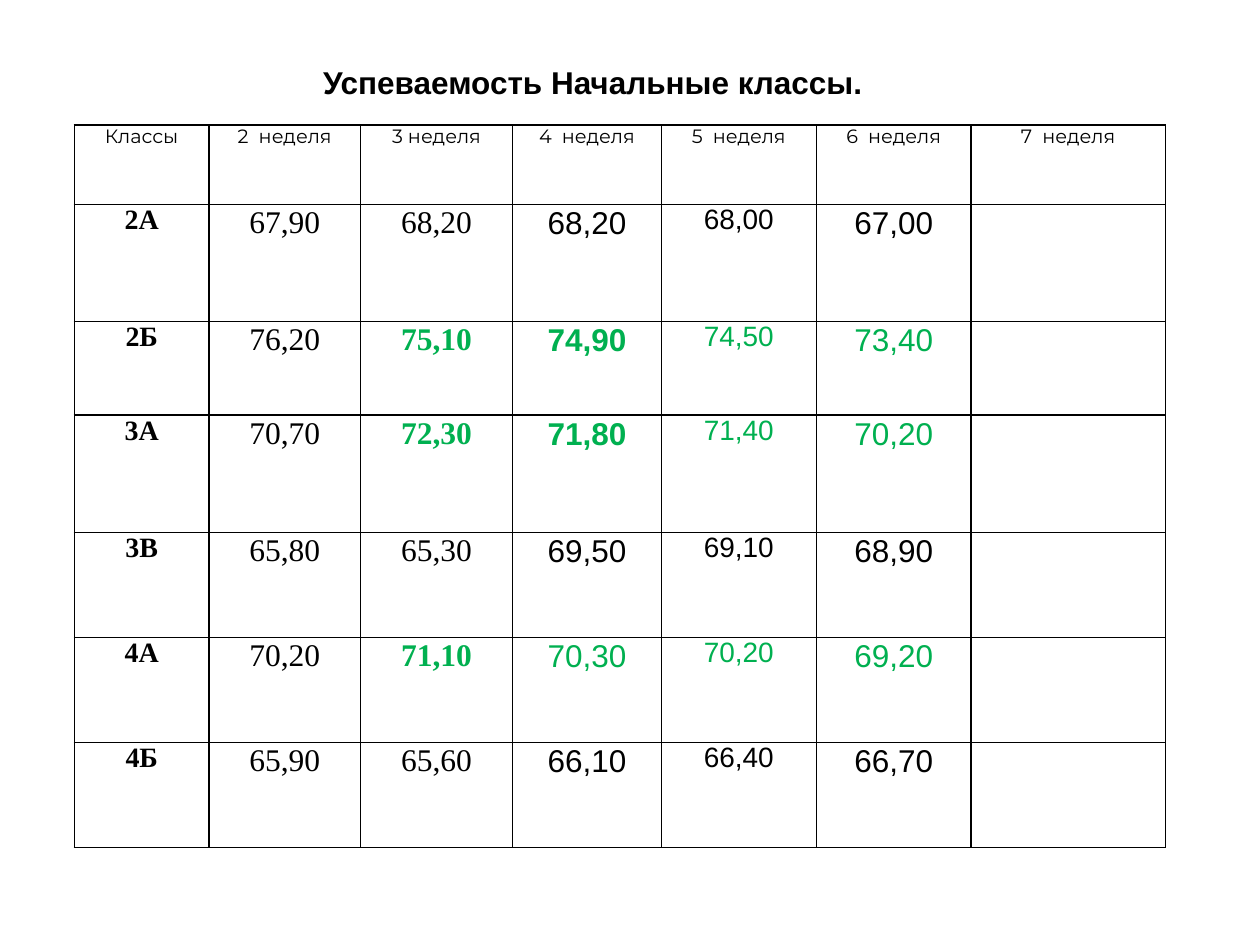
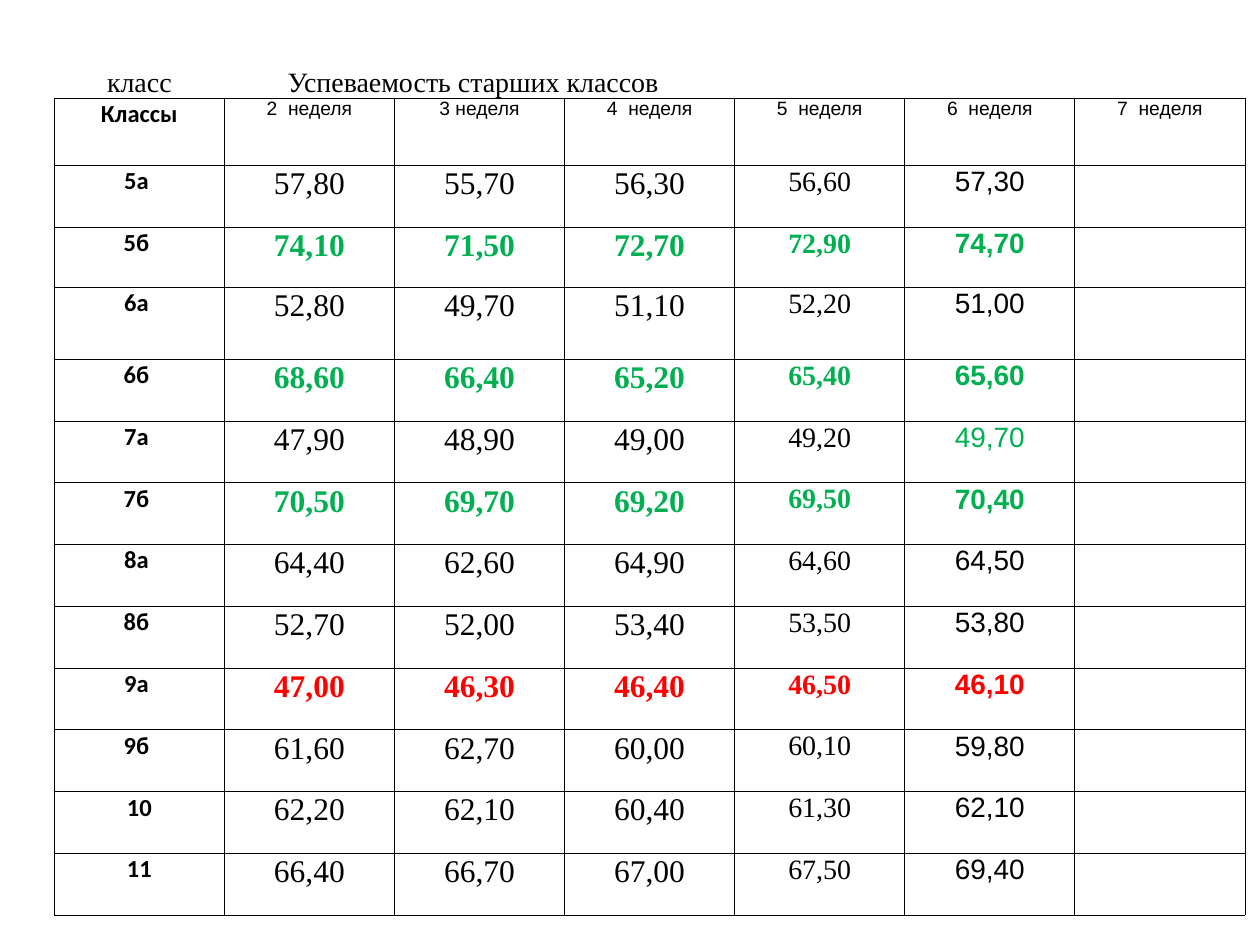
"""Builds two slides of weekly school results, one for junior and one for senior classes."""
import pptx
import pptx.dml.color
import pptx.enum.text
import pptx.oxml
import pptx.oxml.ns
import pptx.util

Pt = pptx.util.Pt
ALIGN = pptx.enum.text.PP_ALIGN
ANCHOR = pptx.enum.text.MSO_ANCHOR
HEX = {"ink": "000000", "good": "00B050", "bad": "FF0000", "paper": "FFFFFF"}
MARKS = {"": ("ink", False), "g": ("good", False), "G": ("good", True), "R": ("bad", True)}
SERIF, SANS = "Times New Roman", "Arial"
PLAIN = "{2D5ABB26-0587-4C30-8999-92F81FD0307C}"
WEEKS = ["2  неделя", "3 неделя", "4  неделя", "5  неделя", "6  неделя", "7  неделя"]

JUNIOR = [
    "2А 67,90 68,20 68,20 68,00 67,00",
    "2Б 76,20 75,10G 74,90G 74,50g 73,40g",
    "3А 70,70 72,30G 71,80G 71,40g 70,20g",
    "3В 65,80 65,30 69,50 69,10 68,90",
    "4А 70,20 71,10G 70,30g 70,20g 69,20g",
    "4Б 65,90 65,60 66,10 66,40 66,70",
]
SENIOR = [
    "5а 57,80 55,70 56,30 56,60 57,30",
    "5б 74,10G 71,50G 72,70G 72,90G 74,70G",
    "6а 52,80 49,70 51,10 52,20 51,00",
    "6б 68,60G 66,40G 65,20G 65,40G 65,60G",
    "7а 47,90 48,90 49,00 49,20 49,70g",
    "7б 70,50G 69,70G 69,20G 69,50G 70,40G",
    "8а 64,40 62,60 64,90 64,60 64,50",
    "8б 52,70 52,00 53,40 53,50 53,80",
    "9а 47,00R 46,30R 46,40R 46,50R 46,10R",
    "9б 61,60 62,70 60,00 60,10 59,80",
    "10 62,20 62,10 60,40 61,30 62,10",
    "11 66,40 66,70 67,00 67,50 69,40",
]


def write(frame, text, font, size, bold=False, tone="ink", gap=0):
    frame.text = text
    para = frame.paragraphs[0]
    para.alignment = ALIGN.CENTER
    para.space_before = para.space_after = Pt(gap)
    for run in para.runs:
        run.font.name = font
        run.font.size = Pt(size)
        run.font.bold = bold
        run.font.color.rgb = pptx.dml.color.RGBColor.from_string(HEX[tone])


def grid(slide, left, top, wide, high, line, bare=0):
    frame = slide.shapes.add_table(len(high), len(wide), Pt(left), Pt(top), Pt(sum(wide)), Pt(sum(high)))
    table = frame.table
    table.first_row = table.horz_banding = False
    for style in frame.element.iter(pptx.oxml.ns.qn("a:tableStyleId")):
        style.text = PLAIN
    for col, size in zip(table.columns, wide):
        col.width = Pt(size)
    for r, size in enumerate(high):
        table.rows[r].height = Pt(size)
        for cell in table.rows[r].cells:
            cell.fill.background()
            cell.margin_left = cell.margin_right = cell.margin_top = Pt(0.72)
            cell.margin_bottom = 0
            sides = "B" if r < bare else "LRTB"
            props = cell._tc.get_or_add_tcPr()
            for i, side in enumerate(sides):
                props.insert(i, pptx.oxml.parse_xml(
                    f'<a:ln{side} {pptx.oxml.ns.nsdecls("a")} w="{Pt(line)}"><a:solidFill>'
                    f'<a:srgbClr val="{HEX["ink"]}"/></a:solidFill></a:ln{side}>'))
    return table


deck = pptx.Presentation()
deck.slide_width, deck.slide_height = Pt(720), Pt(540)

slide = deck.slides.add_slide(deck.slide_layouts[5])
title = slide.shapes.title
title.left, title.top, title.width, title.height = Pt(175.7), Pt(32.4), Pt(326), Pt(29)
write(title.text_frame, "Успеваемость Начальные классы.", SANS, 18, True)
title.text_frame.word_wrap = False
title.text_frame.vertical_anchor = ANCHOR.MIDDLE

table = grid(slide, 42.5, 71.3, [77, 86.5, 87, 85, 88.5, 88.5, 111],
             [45.5, 67, 53.5, 67, 60, 60, 60], 1)
looks = [(SERIF, 16), (SERIF, 18), (SERIF, 18), (SANS, 18), (SANS, 16), (SANS, 18)]
for c, text in enumerate(["Классы"] + WEEKS):
    write(table.cell(0, c).text_frame, text, "Montserrat", 11, gap=3)
for r, row in enumerate(JUNIOR, 1):
    for c, item in enumerate(row.split()):
        tone, bold = MARKS[item[5:]]
        write(table.cell(r, c).text_frame, item[:5], *looks[c], bold or c == 0, tone,
              3 if c in (0, 4) else 0)
for r in range(7):
    for c in range(7):
        if r == 0 or c in (0, 4):
            cell = table.cell(r, c)
            cell.margin_left = cell.margin_right = Pt(5)
            cell.margin_top = 0

slide = deck.slides.add_slide(deck.slide_layouts[6])
table = grid(slide, 31, 20.9, [97.2] * 7, [35.3, 38.2, 35.3, 34.6, 41] + [35.3] * 9, 0.5, bare=1)
head = table.cell(0, 1)
head.merge(table.cell(0, 3))
write(table.cell(0, 0).text_frame, "класс", SERIF, 16)
write(head.text_frame, "Успеваемость старших классов", SERIF, 16)
head.margin_right = Pt(8)
for cell in (table.cell(0, 0), head):
    cell.vertical_anchor = ANCHOR.BOTTOM

write(table.cell(1, 0).text_frame, "Классы", "Calibri", 14, True)
for c, text in enumerate(WEEKS, 1):
    cell = table.cell(1, c)
    write(cell.text_frame, text, SANS, 11, gap=3)
    cell.margin_left = cell.margin_right = Pt(5)
    cell.margin_top = 0

looks = [("Calibri", 14)] + [(SERIF, 18)] * 3 + [(SERIF, 16), (SANS, 16)]
for r, row in enumerate(SENIOR, 2):
    for c, item in enumerate(row.split()):
        tone, bold = MARKS[item[5:]]
        write(table.cell(r, c).text_frame, item[:5], *looks[c], bold or c == 0, tone)
    if not row.startswith("1"):
        table.cell(r, 0).margin_right = Pt(4)
for r in range(1, 14):
    for c in range(5):
        fill = table.cell(r, c).fill
        fill.solid()
        fill.fore_color.rgb = pptx.dml.color.RGBColor.from_string(HEX["paper"])

deck.save("out.pptx")
